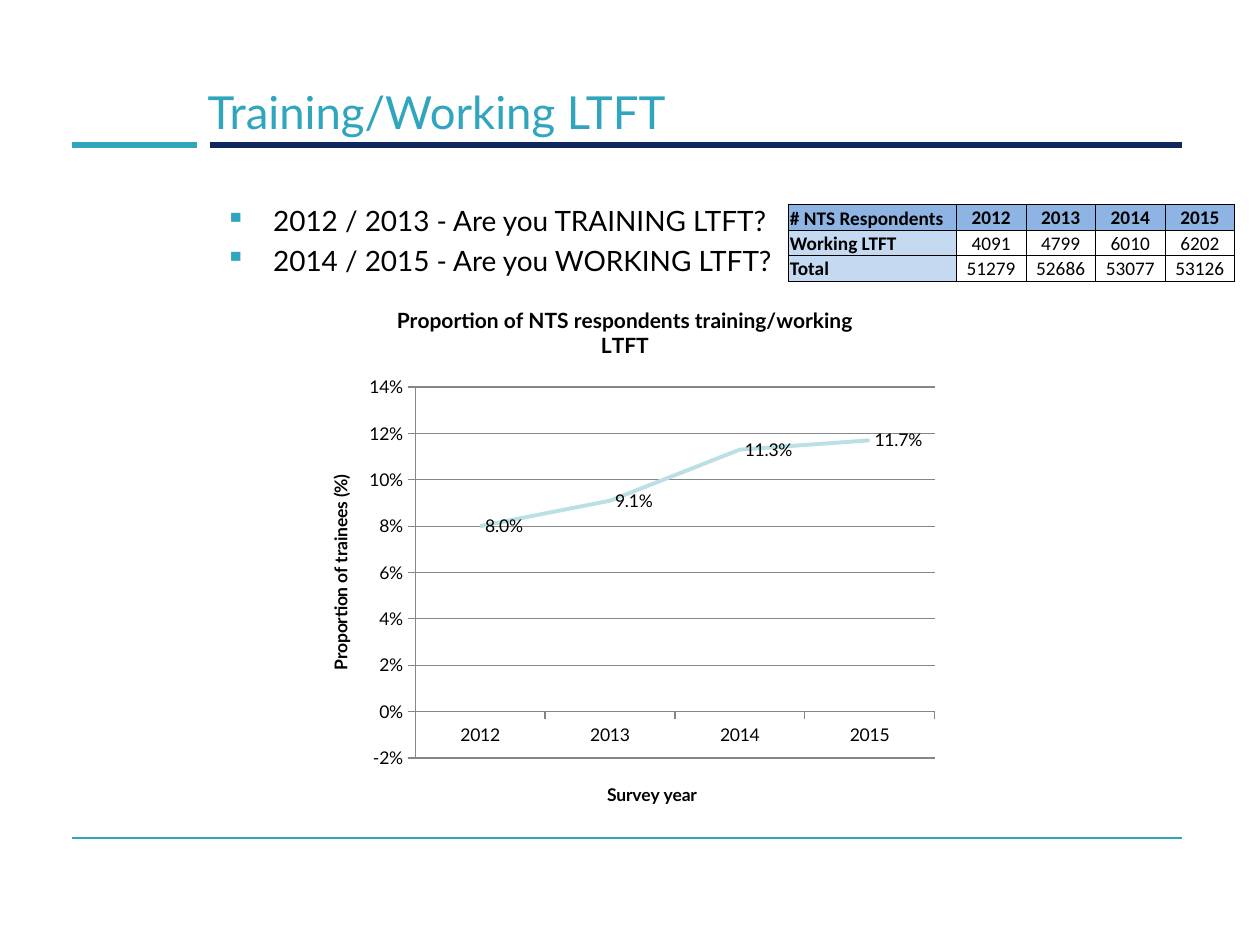
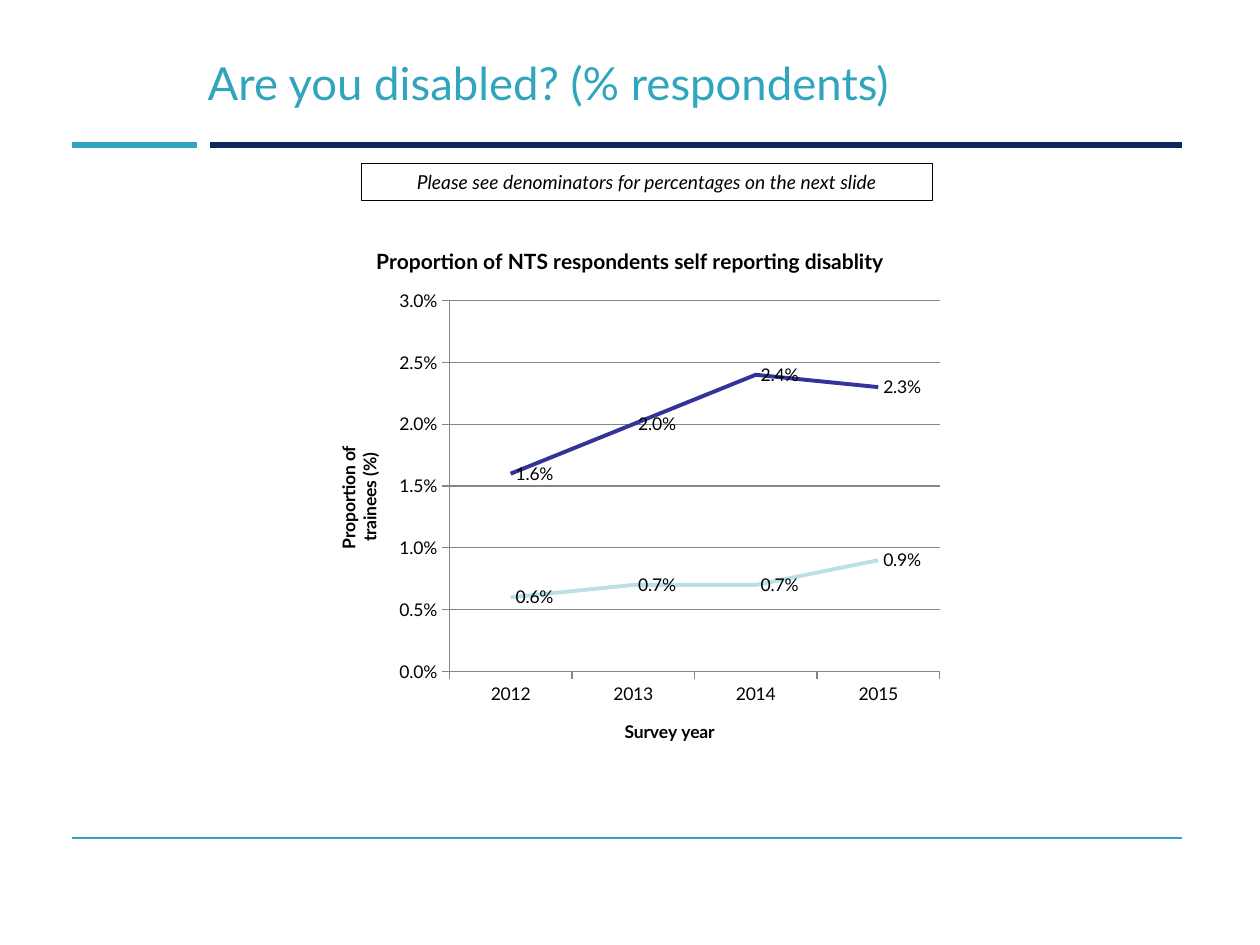
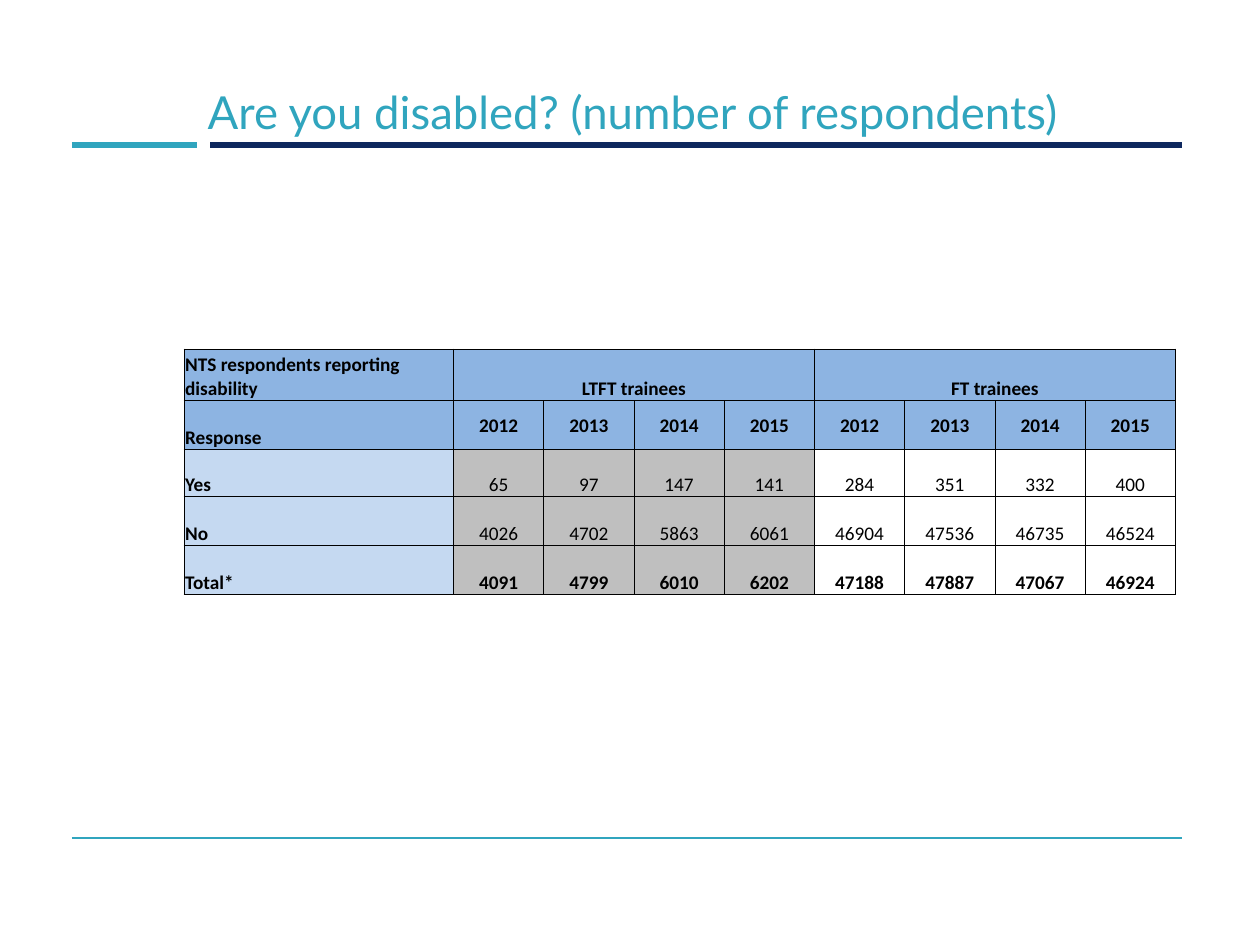
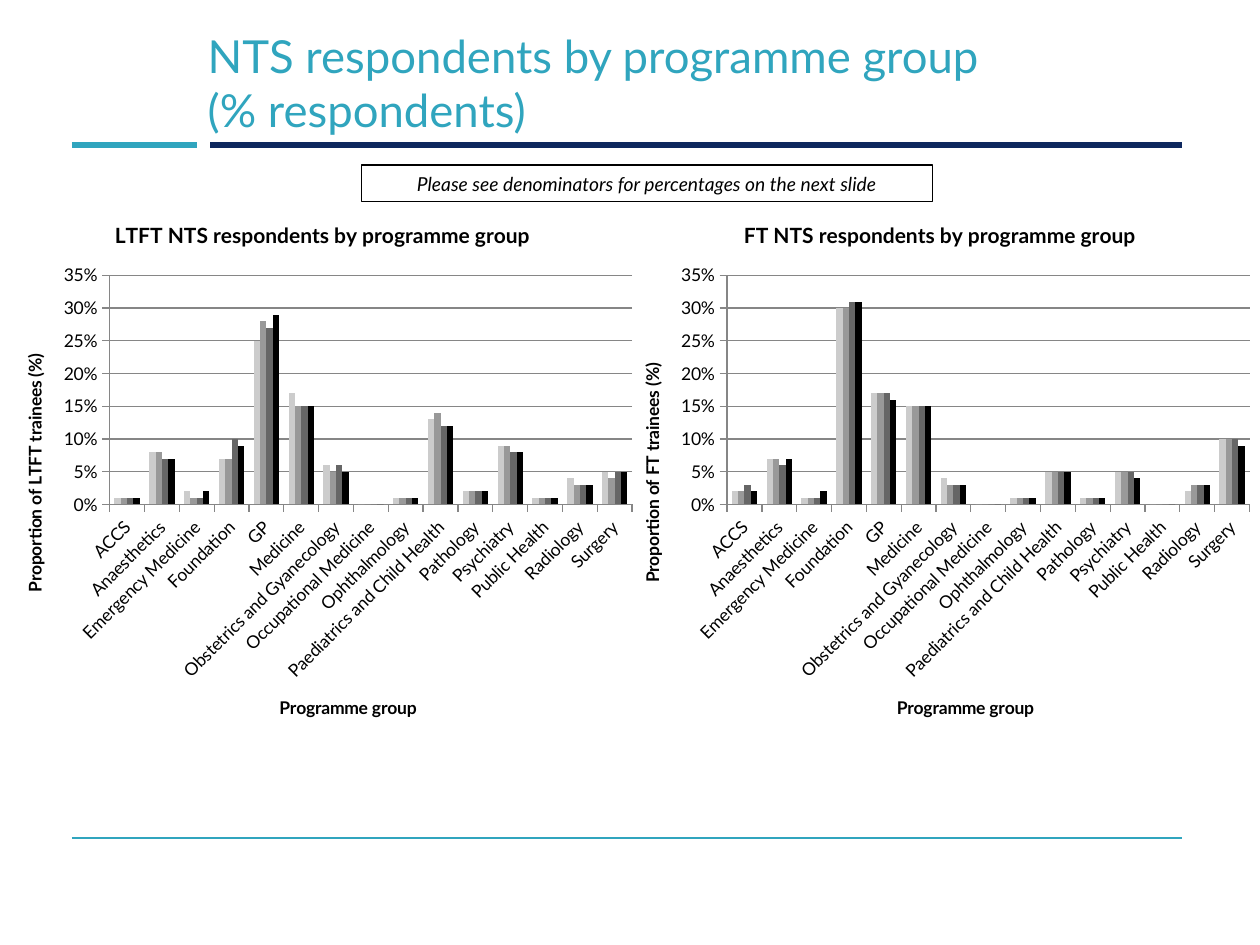
from lxml.etree import SubElement
from pptx import Presentation
from pptx.chart.data import CategoryChartData
from pptx.dml.color import RGBColor
from pptx.enum.chart import XL_CHART_TYPE, XL_LABEL_POSITION, XL_TICK_MARK
from pptx.enum.shapes import MSO_CONNECTOR, MSO_SHAPE
from pptx.enum.text import MSO_ANCHOR, PP_ALIGN
from pptx.oxml.ns import qn
from pptx.util import Inches, Pt

COLORS = {
    "navy": "0E285E", "teal": "30A5BE", "black": "000000", "white": "FFFFFF",
    "header": "8DB4E2", "label": "C5D9F1", "shaded": "BFBFBF", "grid": "868686",
    "pale": "BBE0E3", "indigo": "333399",
    "bar1": "CCCCCC", "bar2": "999999", "bar3": "666666", "bar4": "000000",
}
TITLE = {"name": "Lato", "size": Pt(26), "color": "teal"}
BODY = {"name": "Lato", "size": Pt(16), "color": "black"}
NOTE = {"name": "Lato", "size": Pt(11), "italic": True, "color": "black"}
CELL = {"name": "Calibri", "size": Pt(11), "color": "black"}
AXIS = {"name": "Lato", "size": Pt(10), "bold": False, "color": "black"}
AXIS_TITLE = {**AXIS, "bold": True}
CHART_TITLE = {**AXIS_TITLE, "size": Pt(12)}

RULES = [  # start x, start y, end x, end y, colour, points
    (1.67, 1.15, 9.38, 1.15, "navy", 3),
    (0.57, 1.15, 1.56, 1.15, "teal", 3),
    (0.57, 6.65, 9.38, 6.65, "teal", 0.75),
]
CHART_SIZE = (5.12, 4.33)
YEARS = ["2012", "2013", "2014", "2015"]
DENOMINATORS = "Please see denominators for percentages on the next slide"
PROGRAMMES = [
    "ACCS", "Anaesthetics", "Emergency Medicine", "Foundation", "GP", "Medicine",
    "Obstetrics and Gyanecology", "Occupational Medicine", "Ophthalmology",
    "Paediatrics and Child Health", "Pathology", "Psychiatry", "Public Health",
    "Radiology", "Surgery",
]
LTFT_PERCENT = [
    [1, 8, 2, 7, 25, 17, 6, 0, 1, 13, 2, 9, 1, 4, 5],
    [1, 8, 1, 7, 28, 15, 5, 0, 1, 14, 2, 9, 1, 3, 4],
    [1, 7, 1, 10, 27, 15, 6, 0, 1, 12, 2, 8, 1, 3, 5],
    [1, 7, 2, 9, 29, 15, 5, 0, 1, 12, 2, 8, 1, 3, 5],
]
FT_PERCENT = [
    [2, 7, 1, 30, 17, 15, 4, 0, 1, 5, 1, 5, 0, 2, 10],
    [2, 7, 1, 30, 17, 15, 3, 0, 1, 5, 1, 5, 0, 3, 10],
    [3, 6, 1, 31, 17, 15, 3, 0, 1, 5, 1, 5, 0, 3, 10],
    [2, 7, 2, 31, 16, 15, 3, 0, 1, 5, 1, 4, 0, 3, 9],
]


def rgb(key):
    return RGBColor.from_string(COLORS[key])


def apply(target, values):
    """Set each value on target; a colour key goes to its colour's rgb."""
    for attribute, value in values.items():
        if attribute == "color":
            target.color.rgb = rgb(value)
        else:
            setattr(target, attribute, value)


def format_line(line, color, points):
    line.color.rgb = rgb(color)
    line.width = Pt(points)


def add_text_box(slide, box, anchor):
    frame = slide.shapes.add_textbox(*map(Inches, box)).text_frame
    apply(frame, {"word_wrap": True, "vertical_anchor": anchor})
    return frame


def add_base_slide(deck, title, top=0.52):
    slide = deck.slides.add_slide(deck.slide_layouts[6])
    for x1, y1, x2, y2, color, points in RULES:
        rule = slide.shapes.add_connector(
            MSO_CONNECTOR.STRAIGHT, *map(Inches, (x1, y1, x2, y2)))
        format_line(rule.line, color, points)
        SubElement(rule._element.spPr, qn("a:effectLst"))
    heading = add_text_box(slide, (1.55, top, 7.83, 0.73), MSO_ANCHOR.MIDDLE).paragraphs[0]
    heading.text = title
    apply(heading.font, TITLE)
    return slide


def add_bullets(slide, box, lines):
    frame = add_text_box(slide, box, MSO_ANCHOR.TOP)
    for index, line in enumerate(lines):
        paragraph = frame.add_paragraph() if index else frame.paragraphs[0]
        paragraph.text = line
        if index:
            paragraph.space_before = Pt(3.2)
        properties = paragraph._p.get_or_add_pPr()
        properties.set("marL", str(Inches(0.38)))
        properties.set("indent", str(-Inches(0.38)))
        bullet_color = SubElement(properties, qn("a:buClr"))
        SubElement(bullet_color, qn("a:srgbClr"), val=COLORS["teal"])
        SubElement(properties, qn("a:buChar"), char="▪")
        apply(paragraph.font, BODY)


def add_note(slide, box, text):
    note = slide.shapes.add_shape(MSO_SHAPE.RECTANGLE, *map(Inches, box))
    note.shadow.inherit = False
    note.fill.background()
    format_line(note.line, "black", 0.75)
    note.text_frame.word_wrap = True
    paragraph = note.text_frame.paragraphs[0]
    paragraph.text = text
    paragraph.alignment = PP_ALIGN.CENTER
    apply(paragraph.font, NOTE)


def fill_cell(cell, text, fill, bold, centred):
    properties = cell._tc.get_or_add_tcPr()
    for side in ("lnL", "lnR", "lnT", "lnB"):
        border = SubElement(properties, qn(f"a:{side}"), w=str(Pt(0.5)))
        paint = SubElement(border, qn("a:solidFill"))
        SubElement(paint, qn("a:srgbClr"), val=COLORS["black"])
    cell.fill.solid()
    cell.fill.fore_color.rgb = rgb(fill)
    edge = Inches(0.01)
    apply(cell, {
        "margin_left": edge, "margin_right": edge, "margin_top": edge, "margin_bottom": 0,
        "vertical_anchor": MSO_ANCHOR.MIDDLE if text in YEARS else MSO_ANCHOR.BOTTOM,
    })
    paragraph = cell.text_frame.paragraphs[0]
    paragraph.text = text
    paragraph.alignment = PP_ALIGN.CENTER if centred else PP_ALIGN.LEFT
    apply(paragraph.font, {**CELL, "bold": bold})


def add_count_table(slide, box, rows, label_width, heights, header_rows=1,
                    shaded_columns=(), bold_rows=(), merges=()):
    """Table of counts; merges lists (row, first column, last column)."""
    table = slide.shapes.add_table(len(rows), len(rows[0]), *map(Inches, box)).table
    value_width = (box[2] - label_width) / (len(rows[0]) - 1)
    for index, column in enumerate(table.columns):
        column.width = Inches(value_width if index else label_width)
    for row, height in zip(table.rows, heights):
        row.height = Inches(height)
    for r, texts in enumerate(rows):
        for c, text in enumerate(texts):
            if r < header_rows:
                fill = "header"
            elif c == 0:
                fill = "label"
            else:
                fill = "shaded" if c in shaded_columns else "white"
            bold = r < header_rows or c == 0 or r in bold_rows
            fill_cell(table.cell(r, c), text, fill, bold, c > 0)
    for row, first, last in merges:
        table.cell(row, first).merge(table.cell(row, last))


def set_title(owner, text, values):
    owner.has_title = True
    title = owner.chart_title if hasattr(owner, "chart_title") else owner.axis_title
    title.text_frame.text = text
    for paragraph in title.text_frame.paragraphs:
        apply(paragraph.font, values)


def place_plot(chart, area):
    """Fix the inner plot area as fractions (x, y, w, h) of the chart."""
    plot_area = chart._chartSpace.chart.plotArea
    for layout in plot_area.findall(qn("c:layout")):
        plot_area.remove(layout)
    layout = SubElement(plot_area, qn("c:layout"))
    plot_area.insert(0, layout)
    manual = SubElement(layout, qn("c:manualLayout"))
    settings = [("layoutTarget", "inner"), ("xMode", "edge"), ("yMode", "edge")]
    for tag, value in settings + list(zip("xywh", area)):
        SubElement(manual, qn(f"c:{tag}"), val=str(value))


def add_trainee_chart(slide, kind, origin, title, axis_titles, categories, series,
                      scale, number_format, plot):
    """Chart of shares; series lists (colour, values), scale is (min, max, step)."""
    data = CategoryChartData(number_format=number_format)
    data.categories = categories
    for number, (_, values) in enumerate(series, 1):
        data.add_series(f"Series {number}", values)
    chart = slide.shapes.add_chart(kind, *map(Inches, origin + CHART_SIZE), data).chart
    apply(chart.font, AXIS)
    chart.has_legend = False
    set_title(chart, title, CHART_TITLE)
    place_plot(chart, plot)
    for axis, text in zip((chart.category_axis, chart.value_axis), axis_titles):
        set_title(axis, text, AXIS_TITLE)
        axis.major_tick_mark = XL_TICK_MARK.OUTSIDE
        format_line(axis.format.line, "grid", 0.75)
        apply(axis.tick_labels.font, AXIS)
    value_axis = chart.value_axis
    apply(value_axis, dict(zip(("minimum_scale", "maximum_scale", "major_unit"), scale)))
    value_axis.has_major_gridlines = True
    format_line(value_axis.major_gridlines.format.line, "grid", 0.75)
    apply(value_axis.tick_labels,
          {"number_format": number_format, "number_format_is_linked": False})
    chart.plots[0].vary_by_categories = False
    return chart


def add_line_chart(slide, origin, title, value_title, series, scale, number_format, plot):
    chart = add_trainee_chart(
        slide, XL_CHART_TYPE.LINE, origin, title, ("Survey year", value_title),
        YEARS, series, scale, number_format, plot)
    for line, (color, _) in zip(chart.plots[0].series, series):
        line.smooth = False
        format_line(line.format.line, color, 2.25)
        labels = line.data_labels
        apply(labels, {"show_value": True, "number_format": "0.0%",
                       "number_format_is_linked": False,
                       "position": XL_LABEL_POSITION.RIGHT})
        apply(labels.font, AXIS)


def add_programme_chart(slide, origin, group, percentages):
    series = [(f"bar{number}", [value / 100 for value in values])
              for number, values in enumerate(percentages, 1)]
    chart = add_trainee_chart(
        slide, XL_CHART_TYPE.COLUMN_CLUSTERED, origin,
        f"{group} NTS respondents by programme group",
        ("Programme group", f"Proportion of {group} trainees (%)"),
        PROGRAMMES, series, (0, 0.35, 0.05), "0%", (0.17, 0.14, 0.81, 0.42))
    apply(chart.plots[0], {"gap_width": 150, "overlap": 0})
    for bars, (color, _) in zip(chart.plots[0].series, series):
        bars.format.fill.solid()
        bars.format.fill.fore_color.rgb = rgb(color)
    label_body = chart.category_axis._element.txPr.find(qn("a:bodyPr"))
    label_body.set("rot", str(-45 * 60000))
    label_body.set("vert", "horz")


def build_working_slide(deck):
    slide = add_base_slide(deck, "Training/Working LTFT")
    add_bullets(slide, (1.69, 1.57, 7.2, 4.96), [
        "2012 / 2013 - Are you TRAINING LTFT?",
        "2014 / 2015 - Are you WORKING LTFT?",
    ])
    add_line_chart(
        slide, (2.4, 2.25), "Proportion of NTS respondents training/working LTFT",
        "Proportion of trainees (%)", [("pale", [0.08, 0.091, 0.113, 0.117])],
        (-0.02, 0.14, 0.02), "0%", (0.175, 0.19, 0.805, 0.68))
    add_count_table(slide, (6.26, 1.62, 3.54, 0.61), [
        ["# NTS Respondents", *YEARS],
        ["Working LTFT", "4091", "4799", "6010", "6202"],
        ["Total", "51279", "52686", "53077", "53126"],
    ], 1.33, [0.21, 0.2, 0.2])


def build_disability_share_slide(deck):
    slide = add_base_slide(deck, "Are you disabled? (% respondents)", top=0.29)
    add_line_chart(
        slide, (2.44, 1.78), "Proportion of NTS respondents self reporting disablity",
        "Proportion of\ntrainees (%)",
        [("pale", [0.006, 0.007, 0.007, 0.009]), ("indigo", [0.016, 0.02, 0.024, 0.023])],
        (0, 0.03, 0.005), "0.0%", (0.22, 0.14, 0.76, 0.68))
    add_note(slide, (2.87, 1.3, 4.53, 0.29), DENOMINATORS)


def build_disability_count_slide(deck):
    slide = add_base_slide(deck, "Are you disabled? (number of respondents)")
    add_count_table(slide, (1.46, 2.77, 7.87, 1.97), [
        ["NTS respondents reporting disability", "LTFT trainees", "", "", "",
         "FT trainees", "", "", ""],
        ["Response", *YEARS, *YEARS],
        ["Yes", "65", "97", "147", "141", "284", "351", "332", "400"],
        ["No", "4026", "4702", "5863", "6061", "46904", "47536", "46735", "46524"],
        ["Total*", "4091", "4799", "6010", "6202", "47188", "47887", "47067", "46924"],
    ], 2.14, [0.41, 0.39, 0.37, 0.39, 0.39], header_rows=2,
        shaded_columns=range(1, 5), bold_rows=[4], merges=[(0, 1, 4), (0, 5, 8)])


def build_programme_slide(deck):
    slide = add_base_slide(
        deck, "NTS respondents by programme group\v(% respondents)", top=0.29)
    add_programme_chart(slide, (0, 1.58), "LTFT", LTFT_PERCENT)
    add_programme_chart(slide, (4.9, 1.58), "FT", FT_PERCENT)
    add_note(slide, (2.87, 1.31, 4.53, 0.29), DENOMINATORS)


def main():
    deck = Presentation()
    deck.slide_width, deck.slide_height = Inches(10), Inches(7.5)
    for build in (build_working_slide, build_disability_share_slide,
                  build_disability_count_slide, build_programme_slide):
        build(deck)
    deck.save("out.pptx")


if __name__ == "__main__":
    main()
